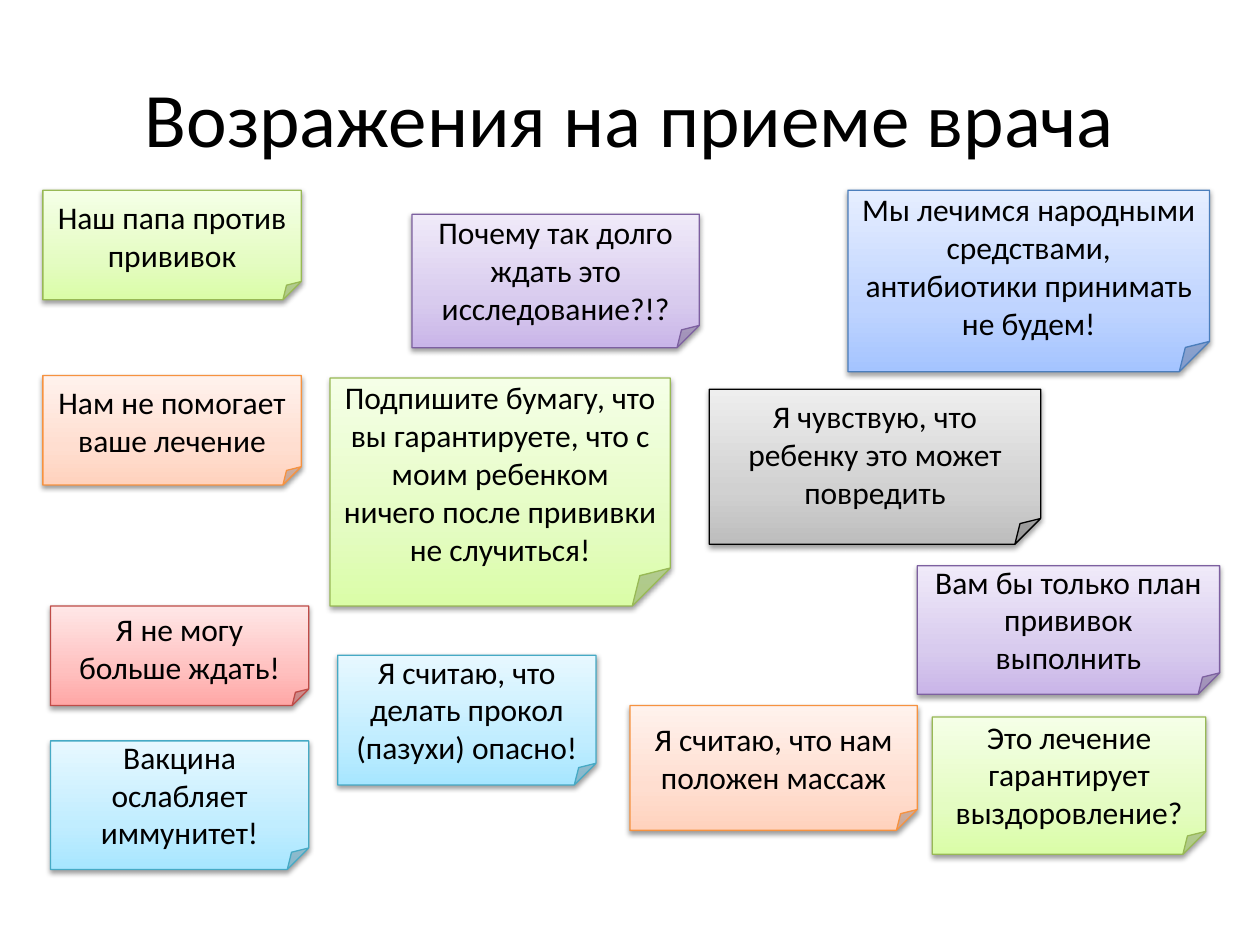
from copy import deepcopy

from lxml import etree
from pptx import Presentation
from pptx.dml.color import RGBColor
from pptx.enum.shapes import MSO_SHAPE
from pptx.enum.text import MSO_ANCHOR, PP_ALIGN
from pptx.oxml.ns import qn
from pptx.util import Inches, Pt

BLACK = RGBColor(0x00, 0x00, 0x00)

# Each note style: outline, then gradient colours from bottom to top
RED = [RGBColor.from_string(c) for c in ("BF4C48", "FFA6A5", "FFC0BF", "FFE7E7")]
PURPLE = [RGBColor.from_string(c) for c in ("7D60A0", "C9B5E8", "D8CBEE", "F0EAF9")]
GREEN = [RGBColor.from_string(c) for c in ("98B955", "DAFDA7", "E4FCC2", "F5FFE7")]
GRAY = [RGBColor.from_string(c) for c in ("000000", "BDBDBD", "D1D1D1", "EEEEEE")]
ORANGE = [RGBColor.from_string(c) for c in ("F69240", "FFD2BD", "FFDED0", "FFF2ED")]
BLUE = [RGBColor.from_string(c) for c in ("4B7EBC", "A4C4FF", "BFD4FF", "E6EEFF")]
AQUA = [RGBColor.from_string(c) for c in ("46AAC5", "A7E6FF", "C1EDFF", "E7F8FF")]
STOP_POSITIONS = (0, 0.35, 1)

# Objections: left, top, width, height, style, wording
OBJECTIONS = [
    (0.4, 4.81, 2.05, 0.79, RED, "Я не могу больше ждать!"),
    (7.28, 4.49, 2.4, 1.02, PURPLE, "Вам бы только план прививок выполнить"),
    (0.34, 1.51, 2.05, 0.87, GREEN, "Наш папа против прививок"),
    (5.63, 3.09, 2.63, 1.23, GRAY, "Я чувствую, что ребенку это может повредить"),
    (0.34, 2.98, 2.05, 0.87, ORANGE, "Нам не помогает ваше лечение"),
    (7.4, 5.69, 2.17, 1.09, GREEN, "Это лечение гарантирует выздоровление?"),
    (6.73, 1.51, 2.87, 1.44, BLUE,
     "Мы лечимся народными средствами, антибиотики принимать не будем!"),
    (2.68, 5.2, 2.05, 1.03, AQUA, "Я считаю, что делать прокол (пазухи) опасно!"),
    (3.27, 1.7, 2.28, 1.06, PURPLE, "Почему так долго ждать это исследование?!?"),
    (5, 5.6, 2.28, 0.99, ORANGE, "Я считаю, что нам положен массаж"),
    (0.4, 5.88, 2.05, 1.02, AQUA, "Вакцина ослабляет иммунитет!"),
    (2.62, 3, 2.7, 1.81, GREEN,
     "Подпишите бумагу, что вы гарантируете, что с моим ребенком "
     "ничего после прививки не случиться!"),
]


def write_text(shape, text, size=18, color=BLACK, font="Calibri",
               align=PP_ALIGN.CENTER, anchor=MSO_ANCHOR.MIDDLE):
    frame = shape.text_frame
    frame.word_wrap = True
    frame.vertical_anchor = anchor
    paragraph = frame.paragraphs[0]
    paragraph.alignment = align
    run = paragraph.add_run()
    run.text = text
    run.font.size = Pt(size)
    run.font.name = font
    run.font.color.rgb = color


def fill_gradient(shape, colors):
    shape.fill.gradient()
    shape.fill.gradient_angle = 90
    # The default gradient has two stops; add the middle one
    stop_list = shape._element.spPr.find(".//" + qn("a:gsLst"))
    stop_list.insert(1, deepcopy(stop_list[0]))
    for stop, position, color in zip(shape.fill.gradient_stops, STOP_POSITIONS, colors):
        stop.position = position
        stop.color.rgb = color


def add_soft_shadow(shape):
    shape.shadow.inherit = False
    effects = shape._element.spPr.find(qn("a:effectLst"))
    shadow = etree.SubElement(effects, qn("a:outerShdw"), blurRad=str(Pt(3.1)),
                              dist=str(Pt(1.6)), dir="5400000", rotWithShape="0")
    color = etree.SubElement(shadow, qn("a:srgbClr"), val=str(BLACK))
    etree.SubElement(color, qn("a:alpha"), val="38000")


def add_note(slide, left, top, width, height, style, text):
    note = slide.shapes.add_shape(MSO_SHAPE.FOLDED_CORNER, Inches(left), Inches(top),
                                  Inches(width), Inches(height))
    outline, *gradient = style
    fill_gradient(note, gradient)
    note.line.color.rgb = outline
    note.line.width = Pt(0.75)
    add_soft_shadow(note)
    write_text(note, text)


def add_title(slide, text):
    title = slide.shapes.title
    title.left, title.top = Inches(0.5), Inches(0.3)
    title.width, title.height = Inches(9), Inches(1.25)
    write_text(title, text, size=44)


def main():
    presentation = Presentation()
    presentation.slide_width = Inches(10)
    presentation.slide_height = Inches(7.5)
    slide = presentation.slides.add_slide(presentation.slide_layouts[5])

    add_title(slide, "Возражения на приеме врача")
    # Sticky notes, from back to front
    for objection in OBJECTIONS:
        add_note(slide, *objection)

    presentation.save("out.pptx")


if __name__ == "__main__":
    main()
